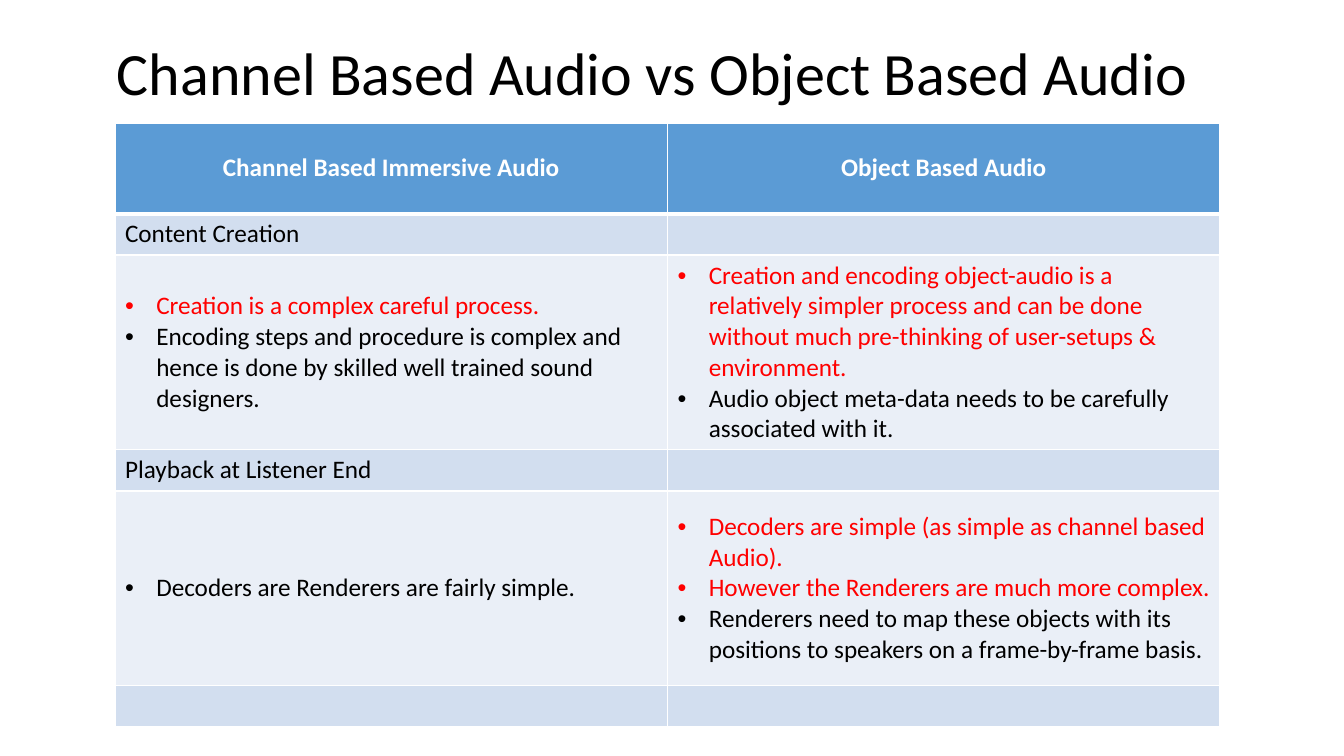
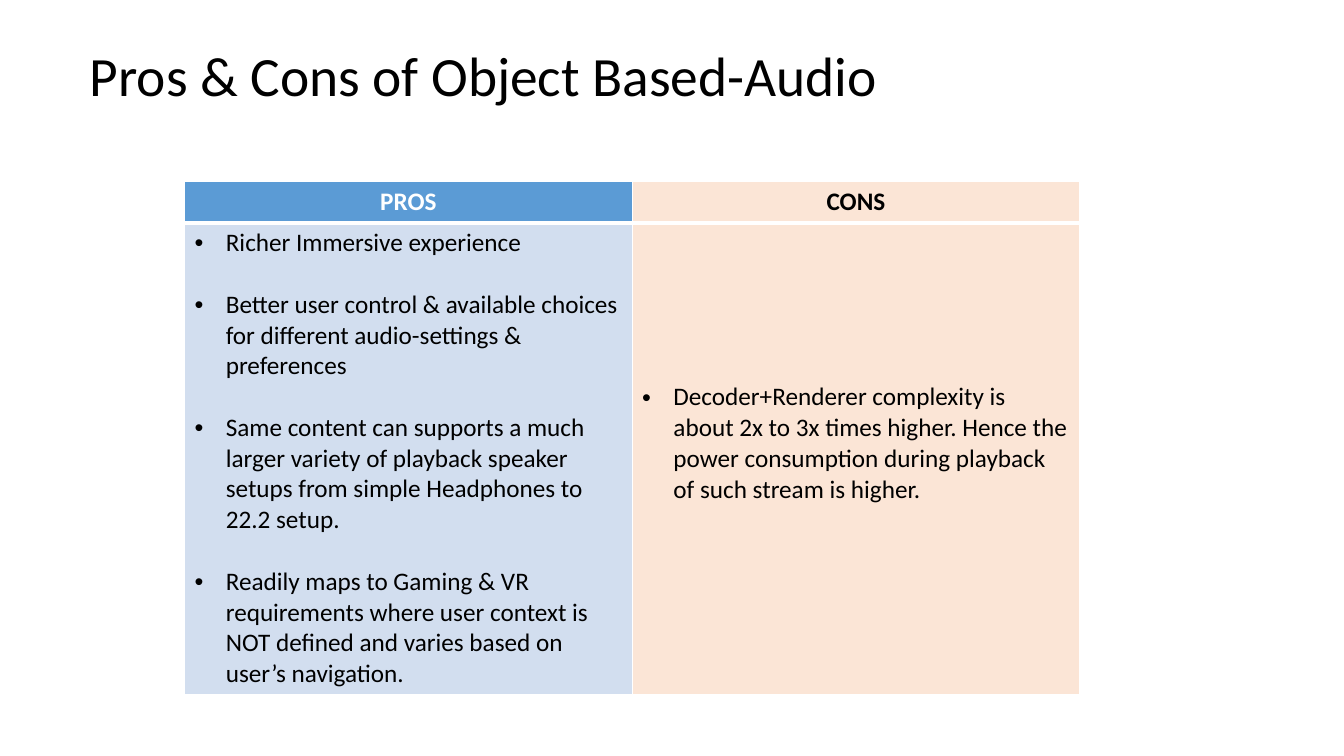
from dataclasses import dataclass

from lxml import etree
from pptx import Presentation
from pptx.dml.color import RGBColor
from pptx.enum import text
from pptx.oxml import ns
from pptx.util import Inches, Pt


@dataclass(frozen=True)
class Theme:
    font: str = "Calibri"
    ink: str = "000000"
    white: str = "FFFFFF"
    accent: str = "FF0000"
    header: str = "5B9BD5"
    band: str = "D2DEEF"
    pale: str = "EAEFF7"
    peach: str = "FBE5D6"
    body_size: float = 18
    rule: float = 1
    header_rule: float = 3
    indent: float = 0.31
    cell_margin: float = 0.05


THEME = Theme()
TITLE_ONLY = 5


@dataclass(frozen=True)
class Entry:
    words: tuple = ()
    fill: str = THEME.band
    color: str = THEME.ink
    bold: bool = False
    bullet: bool = False
    align: text.PP_ALIGN = text.PP_ALIGN.LEFT
    gap: float = 0
    bottom: float = THEME.cell_margin


def add_bullet(paragraph):
    properties = paragraph._p.get_or_add_pPr()
    properties.set("marL", str(Inches(THEME.indent)))
    properties.set("indent", str(-Inches(THEME.indent)))
    font = etree.SubElement(properties, ns.qn("a:buFont"))
    font.set("typeface", "Arial")
    etree.SubElement(properties, ns.qn("a:buChar")).set("char", "•")


def write_text(frame, lines, size=THEME.body_size, color=THEME.ink, bold=False,
               align=text.PP_ALIGN.LEFT, bullet=False, gap=0, spacing=1.0):
    frame.word_wrap = True
    for index, line in enumerate(lines):
        words, line_color = line if isinstance(line, tuple) else (line, color)
        paragraph = frame.paragraphs[0] if index == 0 else frame.add_paragraph()
        paragraph.alignment = align
        paragraph.line_spacing = spacing
        paragraph.space_before = Pt(gap if index else 0)
        if bullet:
            add_bullet(paragraph)
        run = paragraph.add_run()
        run.text = words
        run.font.name = THEME.font
        run.font.size = Pt(size)
        run.font.bold = bold
        run.font.color.rgb = RGBColor.from_string(line_color)


def add_title(slide, box, words, size, spacing):
    title = slide.shapes.title
    title.left, title.top, title.width, title.height = map(Inches, box)
    frame = title.text_frame
    frame.auto_size = text.MSO_AUTO_SIZE.NONE
    frame.vertical_anchor = text.MSO_ANCHOR.MIDDLE
    write_text(frame, [words], size=size, spacing=spacing)


def set_borders(cell, top, bottom):
    properties = cell._tc.get_or_add_tcPr()
    widths = {"L": THEME.rule, "R": THEME.rule, "T": top, "B": bottom}
    for side, width in widths.items():
        line = etree.SubElement(properties, ns.qn(f"a:ln{side}"))
        line.set("w", str(Pt(width)))
        fill = etree.SubElement(line, ns.qn("a:solidFill"))
        etree.SubElement(fill, ns.qn("a:srgbClr")).set("val", THEME.white)


def fill_cell(cell, entry, row):
    set_borders(cell,
                top=THEME.header_rule if row == 1 else THEME.rule,
                bottom=THEME.header_rule if row == 0 else THEME.rule)
    cell.fill.solid()
    cell.fill.fore_color.rgb = RGBColor.from_string(entry.fill)
    cell.vertical_anchor = text.MSO_ANCHOR.MIDDLE
    cell.margin_bottom = Inches(entry.bottom)
    write_text(cell.text_frame, entry.words, color=entry.color, bold=entry.bold,
               align=entry.align, bullet=entry.bullet, gap=entry.gap)


def add_comparison(slide, left, top, width, heights, rows):
    columns = len(rows[0])
    frame = slide.shapes.add_table(len(rows), columns, Inches(left), Inches(top),
                                   Inches(width), Inches(sum(heights)))
    table = frame.table
    table.first_row = table.horz_banding = False
    for column in table.columns:
        column.width = Inches(width / columns)
    for index, (height, entries) in enumerate(zip(heights, rows)):
        table.rows[index].height = Inches(height)
        for column, entry in enumerate(entries):
            fill_cell(table.cell(index, column), entry, index)


def heading(words, fill=THEME.header, color=THEME.white):
    return Entry((words,), fill, color, bold=True, align=text.PP_ALIGN.CENTER)


def points(*lines, fill=THEME.pale, **options):
    return Entry(lines, fill, bullet=True, **options)


def stressed(words):
    return words, THEME.accent


def build_channel_vs_object(slide):
    add_title(slide, (1.06, 0.42, 11.38, 0.72),
              "Channel Based Audio vs Object Based Audio", size=42.9, spacing=0.8)
    rows = [
        [heading("Channel Based Immersive Audio"), heading("Object Based Audio")],
        [Entry(("Content Creation",)), Entry()],
        [points(stressed("Creation is a complex careful process."),
                "Encoding steps and procedure is complex and hence is done by "
                "skilled well trained sound designers."),
         points(stressed("Creation and encoding object-audio is a relatively simpler "
                         "process and can be done without much pre-thinking of "
                         "user-setups & environment."),
                "Audio object meta-data needs to be carefully associated with it.")],
        [Entry(("Playback at Listener End",)), Entry()],
        [points("Decoders are Renderers are fairly simple."),
         points(stressed("Decoders are simple (as simple as channel based Audio)."),
                stressed("However the Renderers are much more complex."),
                "Renderers need to map these objects with its positions to "
                "speakers on a frame-by-frame basis.")],
        [Entry(), Entry()],
    ]
    add_comparison(slide, 1.14, 1.22, 10.96, [0.9, 0.41, 1.93, 0.41, 1.93, 0.41], rows)


def build_pros_and_cons(slide):
    add_title(slide, (0.79, 0.42, 11.38, 0.72),
              "Pros & Cons of Object Based-Audio", size=39.6, spacing=0.9)
    pros = points(
        "Richer Immersive experience",
        "Better user control & available choices for different audio-settings & "
        "preferences",
        "Same content can supports a much larger variety of playback speaker "
        "setups from simple Headphones to 22.2 setup.",
        "Readily maps to Gaming & VR requirements where user context is NOT "
        "defined and varies based on user’s navigation.",
        fill=THEME.band, gap=22)
    cons = points(
        "Decoder+Renderer complexity is about 2x to 3x times higher. Hence the "
        "power consumption during playback of such stream is higher.",
        fill=THEME.peach, bottom=0.35)
    rows = [[heading("PROS"), heading("CONS", THEME.peach, THEME.ink)], [pros, cons]]
    add_comparison(slide, 1.83, 1.8, 8.88, [0.41, 4.66], rows)


def main():
    deck = Presentation()
    deck.slide_width, deck.slide_height = Inches(13.33), Inches(7.5)
    for build in (build_channel_vs_object, build_pros_and_cons):
        build(deck.slides.add_slide(deck.slide_layouts[TITLE_ONLY]))
    deck.save("out.pptx")


if __name__ == "__main__":
    main()
